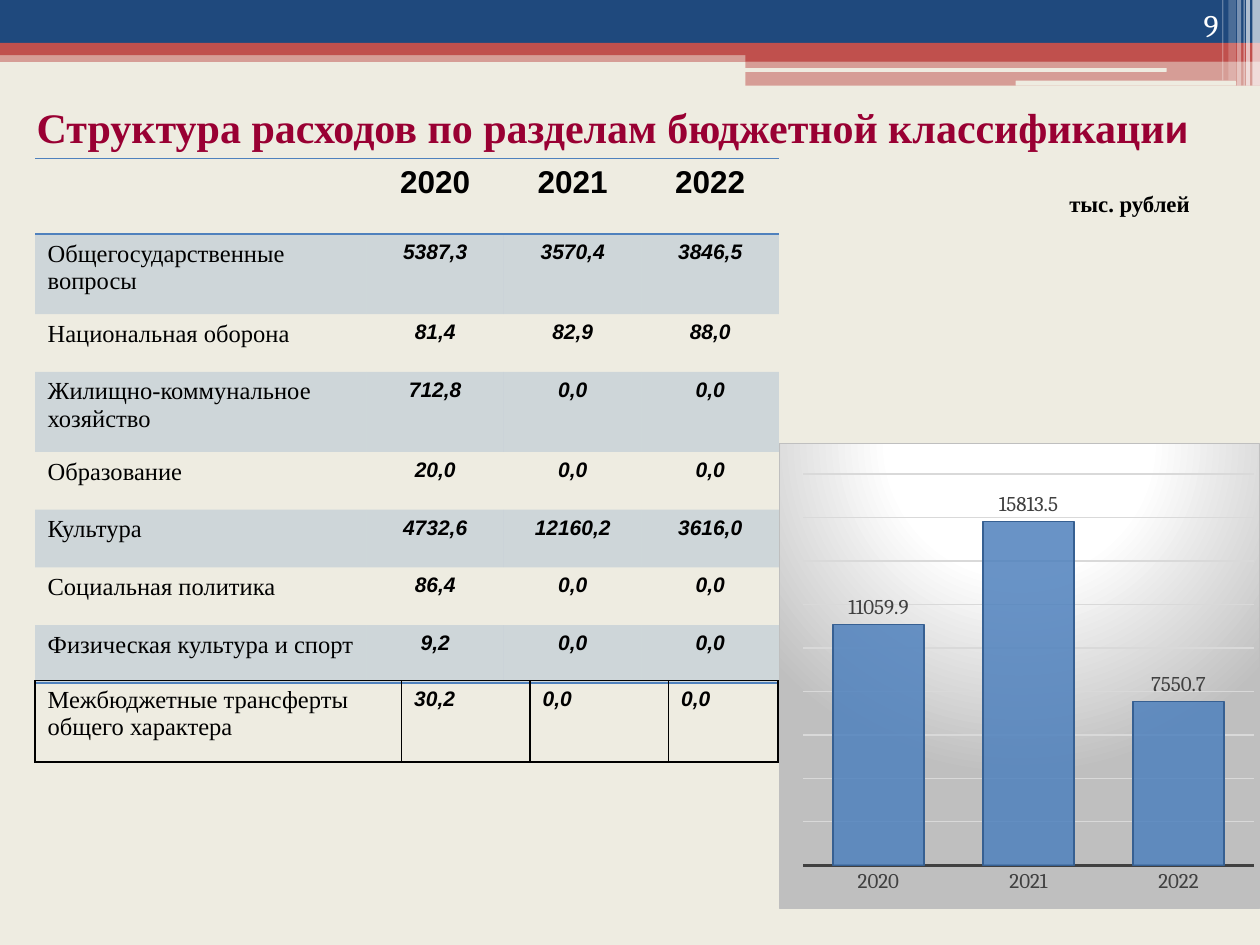
from lxml.etree import SubElement
from pptx import Presentation
from pptx.chart.data import CategoryChartData
from pptx.dml.color import RGBColor
from pptx.enum.chart import XL_CHART_TYPE, XL_LABEL_POSITION, XL_TICK_LABEL_POSITION, XL_TICK_MARK
from pptx.enum.shapes import MSO_SHAPE
from pptx.enum.text import MSO_ANCHOR, PP_ALIGN
from pptx.oxml import parse_xml
from pptx.oxml.ns import nsdecls, qn
from pptx.util import Pt

COLORS = {
    "bg": "EEECE1", "navy": "1F497D", "red": "C0504D", "blue": "4F81BD", "edge": "376092",
    "title": "990033", "black": "000000", "white": "FFFFFF", "dark": "404040",
    "grid": "D9D9D9", "gray": "BFBFBF",
}
NO_STYLE = "{2D5ABB26-0587-4C30-8999-92F81FD0307C}"
SERIF, SANS, THEME = "Times New Roman", "Arial", "Cambria"


class Deck:
    """Holds the style and the current slide."""

    def __init__(self):
        self.prs = Presentation()
        self.prs.slide_width, self.prs.slide_height = Pt(720), Pt(540)
        self.s = self.prs.slides.add_slide(self.prs.slide_layouts[6])
        self.paint(self.s.background.fill, "bg")

    def rgb(self, name):
        return RGBColor.from_string(COLORS[name])

    def paint(self, fill, color, parent=None, alpha=100):
        fill.solid()
        fill.fore_color.rgb = self.rgb(color)
        if alpha < 100:
            clr = parent.find(qn("a:solidFill") + "/" + qn("a:srgbClr"))
            SubElement(clr, qn("a:alpha")).set("val", str(alpha * 1000))

    def line(self, line, color, width):
        self.paint(line.fill, color)
        line.width = Pt(width)

    def font(self, font, name, size, color="black", bold=False, italic=False):
        font.name, font.size = name, Pt(size)
        font.bold, font.italic = bold, italic
        font.color.rgb = self.rgb(color)

    def bar(self, x, y, w, h, color, alpha=100, kind=MSO_SHAPE.RECTANGLE):
        sp = self.s.shapes.add_shape(kind, Pt(x), Pt(y), Pt(w), Pt(h))
        sp.shadow.inherit = False
        self.paint(sp.fill, color, sp.element.spPr, alpha)
        sp.line.fill.background()

    def run(self, p, text, *style):
        r = p.add_run()
        r.text = text
        self.font(r.font, *style)

    def text(self, x, y, w, h, runs, align=PP_ALIGN.LEFT, anchor=MSO_ANCHOR.TOP):
        tf = self.s.shapes.add_textbox(Pt(x), Pt(y), Pt(w), Pt(h)).text_frame
        tf.word_wrap, tf.vertical_anchor = True, anchor
        p = tf.paragraphs[0]
        p.alignment = align
        for text, *style in runs:
            self.run(p, text, *style)

    def border(self, cell, sides, color):
        tcPr = cell._tc.get_or_add_tcPr()
        for side in sides:
            tcPr.append(parse_xml(
                f'<a:ln{side} {nsdecls("a")} w="12700"><a:solidFill>'
                f'<a:srgbClr val="{COLORS[color]}"/></a:solidFill></a:ln{side}>'))

    def table(self, x, y, cols, heights, rows, align, edges, edge_color, header=False):
        gf = self.s.shapes.add_table(len(rows), len(cols), Pt(x), Pt(y), Pt(sum(cols)), Pt(sum(heights)))
        next(gf.element.iter(qn("a:tableStyleId"))).text = NO_STYLE
        for col, width in zip(gf.table.columns, cols):
            col.width = Pt(width)
        for i, (row, values) in enumerate(zip(gf.table.rows, rows)):
            row.height = Pt(heights[i])
            for j, (cell, value) in enumerate(zip(row.cells, values)):
                self.border(cell, edges.get(i, ""), edge_color)
                if header and i % 2:
                    self.paint(cell.fill, "blue", cell._tc.tcPr, 20)
                else:
                    cell.fill.background()
                if not value:
                    continue
                p = cell.text_frame.paragraphs[0]
                if j:
                    p.alignment = align
                if header and i == 0:
                    self.run(p, value, SANS, 18, "black", True)
                elif j == 0:
                    self.run(p, value, SERIF, 14)
                else:
                    self.run(p, value, SANS, 12, "black", True, True)

    def chart(self, x, y, w, h, cats, vals):
        data = CategoryChartData(number_format="0.0")
        data.categories = cats
        data.add_series("Series 1", vals)
        chart = self.s.shapes.add_chart(
            XL_CHART_TYPE.COLUMN_CLUSTERED, Pt(x), Pt(y), Pt(w), Pt(h), data).chart
        chart.has_legend = chart.has_title = False
        self.font(chart.font, THEME, 10)
        plot = chart.plots[0]
        plot.gap_width, plot.vary_by_categories = 65, False
        series = plot.series[0]
        series.format.fill.solid()
        self.paint(series.format.fill, "blue", series._element.find(qn("c:spPr")), 85)
        self.line(series.format.line, "edge", 0.75)
        labels = series.data_labels
        labels.show_value, labels.position = True, XL_LABEL_POSITION.OUTSIDE_END
        labels.number_format, labels.number_format_is_linked = "0.0", False
        cat, val = chart.category_axis, chart.value_axis
        for item in (labels, cat.tick_labels, val.tick_labels):
            self.font(item.font, THEME, 12, "dark")
        for axis in (cat, val):
            axis.major_tick_mark = axis.minor_tick_mark = XL_TICK_MARK.NONE
        self.line(cat.format.line, "dark", 1.5)
        val.format.line.fill.background()
        val.tick_label_position = XL_TICK_LABEL_POSITION.NONE
        val.minimum_scale, val.maximum_scale, val.major_unit = 0, 18000, 2000
        self.line(val.major_gridlines.format.line, "grid", 0.75)
        self.chart_frame(chart)

    def chart_frame(self, chart):
        node = chart._chartSpace.find(qn("c:chart"))
        area = node.find(qn("c:plotArea"))
        for old in area.findall(qn("c:layout")):
            area.remove(old)
        box = "".join(f'<c:{k} val="{v}"/>' for k, v in (
            ("layoutTarget", "inner"), ("xMode", "edge"), ("yMode", "edge"),
            ("x", 0.05), ("y", 0.066), ("w", 0.938), ("h", 0.842)))
        area.insert(0, parse_xml(
            f'<c:layout {nsdecls("c")}><c:manualLayout>{box}</c:manualLayout></c:layout>'))
        stops = "".join(
            f'<a:gs pos="{pos * 1000}"><a:srgbClr val="{COLORS[c]}"/></a:gs>'
            for pos, c in ((0, "white"), (39, "white"), (100, "gray")))
        node.addnext(parse_xml(
            f'<c:spPr {nsdecls("c", "a")}><a:gradFill><a:gsLst>{stops}</a:gsLst>'
            '<a:path path="circle"><a:fillToRect l="50000" t="-80000" r="50000" b="180000"/></a:path>'
            f'</a:gradFill><a:ln w="9525"><a:solidFill><a:srgbClr val="{COLORS["gray"]}"/>'
            '</a:solidFill></a:ln></c:spPr>'))


def main():
    d = Deck()
    for band in (
            (0, 28.8, 720, 6.6, "red", 50), (0, 0, 720, 24.5, "navy"), (0, 24.5, 720, 7, "red"),
            (426, 28.1, 294, 7.2, "red"), (426, 35.2, 294, 13.7, "red", 50)):
        d.bar(*band)
    for x, y, w, h in ((425.5, 38.9, 241.2, 2.2), (580.3, 46.1, 126, 2.9)):
        d.bar(x, y, w, h, "bg", kind=MSO_SHAPE.ROUNDED_RECTANGLE)
    for x, w, h, alpha in (
            (715.7, 4.3, 49, 65), (712.1, 2.2, 49, 65), (710.6, 0.7, 49, 60),
            (707, 2.2, 49, 40), (702, 4.3, 46, 20), (698.4, 0.7, 46, 30)):
        d.bar(x, 0, w, h, "white", alpha)

    rows = [
        ("", "2020", "2021", "2022"),
        ("Общегосударственные вопросы", "5387,3", "3570,4", "3846,5"),
        ("Национальная оборона", "81,4", "82,9", "88,0"),
        ("Жилищно-коммунальное хозяйство", "712,8", "0,0", "0,0"),
        ("Образование", "20,0", "0,0", "0,0"),
        ("Культура", "4732,6", "12160,2", "3616,0"),
        ("Социальная политика", "86,4", "0,0", "0,0"),
        ("Физическая культура и спорт", "9,2", "0,0", "0,0"),
    ]
    d.table(20, 90.5, [189.4] + [78.6] * 3, [43.2, 45.8, 33, 45.8] + [33] * 4, rows,
            PP_ALIGN.CENTER, {0: "TB", 7: "B"}, "blue", header=True)
    d.text(0, 54.7, 700, 36, [
        ("Структура расходов по разделам бюджетной классификаци", SERIF, 24, "title", True),
        ("и", "Calibri", 24, "title", True)], PP_ALIGN.CENTER)
    d.text(643.7, 0, 59.8, 28.8, [("9", THEME, 18, "white")], PP_ALIGN.RIGHT, MSO_ANCHOR.BOTTOM)
    d.text(604, 105.1, 108, 23, [("тыс. рублей", SERIF, 13, "black", True)])
    d.chart(445, 253, 275, 266.4, ["2020", "2021", "2022"], [11059.9, 15813.5, 7550.7])
    d.table(20, 389, [209.5, 73.4, 79.2, 62.6], [46.5],
            [("Межбюджетные трансферты общего характера", "30,2", "0,0", "0,0")],
            PP_ALIGN.LEFT, {0: "LRTB"}, "black")
    d.prs.save("out.pptx")


if __name__ == "__main__":
    main()
